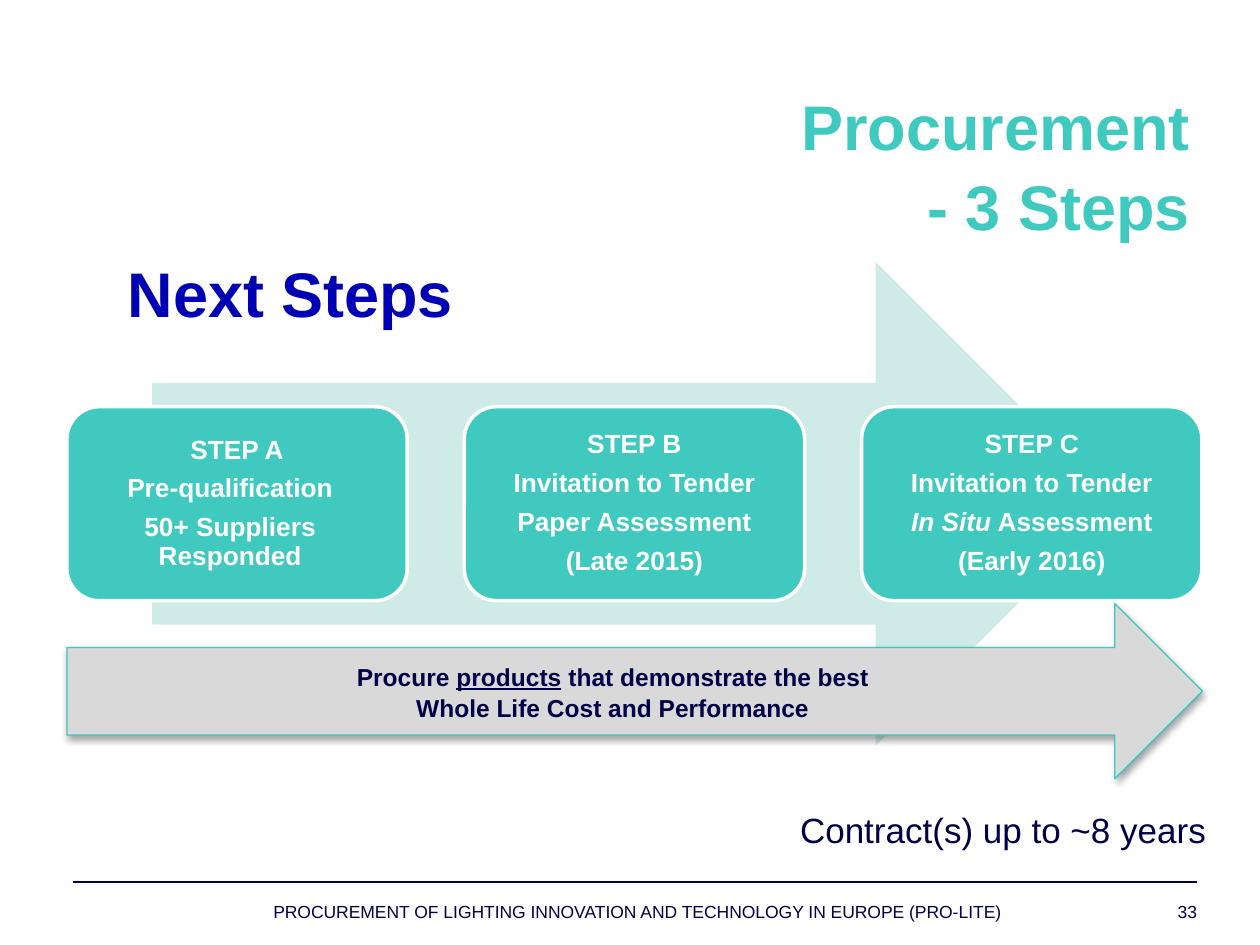
from lxml import etree
from pptx import Presentation
from pptx import util as u
from pptx.dml import color
from pptx.enum import shapes, text
from pptx.oxml import ns


class Theme:
    font = "Arial"
    navy = color.RGBColor.from_string("000047")
    blue = color.RGBColor.from_string("0000B5")
    teal = color.RGBColor.from_string("40C9BF")
    edge = color.RGBColor.from_string("3BC8BE")
    pale = color.RGBColor.from_string("CFEBE8")
    grey = color.RGBColor.from_string("D9D9D9")
    white = color.RGBColor.from_string("FFFFFF")
    heading, contract, step, goal, footer = (u.Pt(n) for n in (36, 20, 15, 14, 10))


def write(holder, lines, size, ink, align, bold=False, spacing=1.05, after=0, inset=None):
    frame = holder.text_frame
    frame.word_wrap = True
    if inset is not None:
        frame.margin_left = frame.margin_right = u.Cm(inset)
        frame.margin_top = frame.margin_bottom = u.Cm(inset)
    for index, runs in enumerate(lines):
        line = frame.paragraphs[0] if index == 0 else frame.add_paragraph()
        line.alignment, line.line_spacing, line.space_after = align, spacing, u.Pt(after)
        line.font.name, line.font.size, line.font.bold = Theme.font, size, bold
        line.font.color.rgb = ink
        for words, style in runs:
            run = line.add_run()
            run.text = words
            if style:
                setattr(run.font, style, True)
    return frame


def block(preset, box, fill, edge=None, width=0):
    shape = slide.shapes.add_shape(preset, *(u.Cm(n) for n in box))
    shape.shadow.inherit = False
    shape.fill.solid()
    shape.fill.fore_color.rgb = fill
    if edge is None:
        shape.line.fill.background()
    else:
        shape.line.color.rgb = edge
        shape.line.width = u.Pt(width)
    return shape


deck = Presentation()
deck.slide_width, deck.slide_height = u.Cm(25.4), u.Cm(19.05)
slide = deck.slides.add_slide(deck.slide_layouts[6])
left, center, right = text.PP_ALIGN.LEFT, text.PP_ALIGN.CENTER, text.PP_ALIGN.RIGHT

footer_rule = slide.shapes.add_connector(
    shapes.MSO_CONNECTOR.STRAIGHT, u.Cm(1.47), u.Cm(17.78), u.Cm(24.13), u.Cm(17.78))
footer_rule.line.color.rgb = Theme.navy
footer_rule.line.width = u.Pt(1)
etree.SubElement(footer_rule._element.spPr, ns.qn("a:effectLst"))

project = "PROCUREMENT OF LIGHTING INNOVATION AND TECHNOLOGY IN EUROPE (PRO-LITE)"
for words, x, width, align in ((project, 5.51, 15.67, left), ("33", 21.59, 2.54, right)):
    footer = slide.shapes.add_textbox(u.Cm(x), u.Cm(18.16), u.Cm(width), u.Cm(0.89))
    write(footer, [[(words, None)]], Theme.footer, Theme.navy, align, spacing=1.0, inset=0)

process_arrow = block(shapes.MSO_SHAPE.RIGHT_ARROW, (3.07, 5.28, 19.46, 9.75), Theme.pale)

steps = [
    [[("STEP A", None)], [("Pre-qualification", None)], [("50+ Suppliers Responded", None)]],
    [[("STEP B", None)], [("Invitation to Tender", None)],
     [("Paper Assessment", None)], [("(Late 2015)", None)]],
    [[("STEP C", None)], [("Invitation to Tender", None)],
     [("In Situ", "italic"), (" Assessment", None)], [("(Early 2016)", None)]],
]
for index, lines in enumerate(steps):
    card = block(shapes.MSO_SHAPE.ROUNDED_RECTANGLE, (1.35 + index * 8.01, 8.2, 6.86, 3.91),
                 Theme.teal, Theme.white, 2)
    card_text = write(card, lines, Theme.step, Theme.white, center, True, 0.9, 6, 0.15)
    if index == 0:
        card_text.paragraphs[1]._p.get_or_add_pPr().set("marR", str(u.Cm(0.28)))

goal_arrow = block(shapes.MSO_SHAPE.RIGHT_ARROW, (1.35, 12.17, 22.89, 3.53),
                   Theme.grey, Theme.edge, 0.75)
shadow = etree.SubElement(
    goal_arrow._element.spPr.find(ns.qn("a:effectLst")), ns.qn("a:outerShdw"),
    blurRad="40000", dist="23000", dir="5400000", rotWithShape="0")
shade = etree.SubElement(shadow, ns.qn("a:srgbClr"), val="000000")
etree.SubElement(shade, ns.qn("a:alpha"), val="35000")
goal = [[("Procure ", None), ("products", "underline"), (" that demonstrate the best", None)],
        [("Whole Life Cost and Performance", None)]]
write(goal_arrow, goal, Theme.goal, Theme.navy, center, True)

headings = [
    (["Procurement", "- 3 Steps"], (1.35, 1.57, 22.89, 3.33),
     Theme.heading, Theme.teal, right, True),
    (["Contract(s) up to ~8 years"], (12.07, 16.13, 12.5, 1.12),
     Theme.contract, Theme.navy, right, False),
    (["Next Steps"], (-5.59, 4.93, 22.89, 1.8),
     Theme.heading, Theme.blue, center, True),
]
for lines, box, size, ink, align, bold in headings:
    heading = slide.shapes.add_textbox(*(u.Cm(n) for n in box))
    frame = write(heading, [[(words, None)] for words in lines], size, ink, align, bold)
    frame.auto_size = text.MSO_AUTO_SIZE.SHAPE_TO_FIT_TEXT

deck.save("out.pptx")
